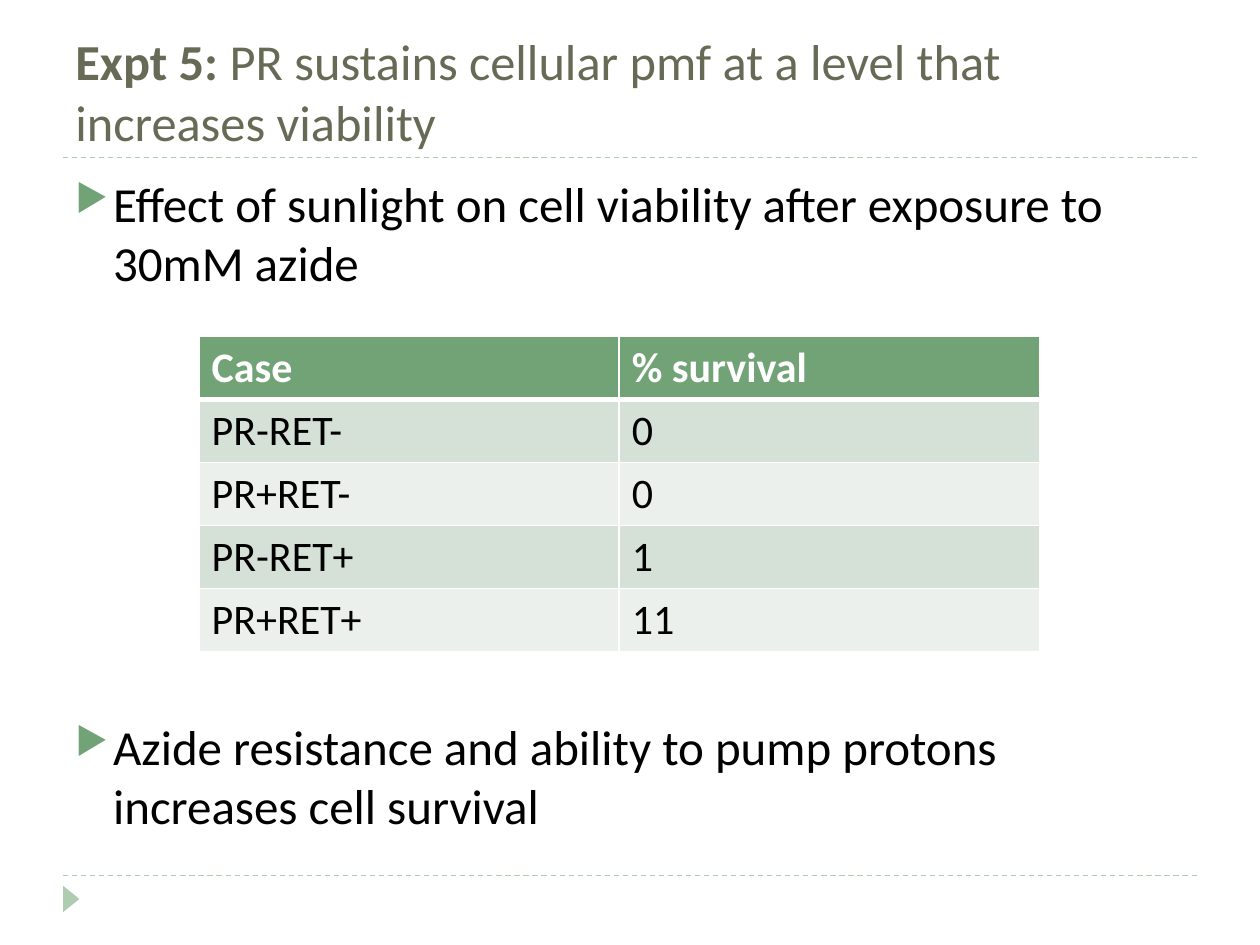
from dataclasses import dataclass

from lxml import etree
from pptx import Presentation
from pptx import util as u
from pptx.dml.color import RGBColor
from pptx.enum import dml, shapes, text
from pptx.oxml.ns import qn

PX = 9144  # EMU in one px, 100 px to the inch
FONT = "Calibri"
COLOURS = {
    "title": "676A55",
    "body": "000000",
    "accent": "72A376",
    "rule": "B0CCB0",
    "band_dark": "D5E0D6",
    "band_light": "EBF0EC",
    "white": "FFFFFF",
}
SURVIVAL_ROWS = [
    ("Case", "% survival"),
    ("PR-RET-", "0"),
    ("PR+RET-", "0"),
    ("PR-RET+", "1"),
    ("PR+RET+", "11"),
]


@dataclass
class Box:
    left: int
    top: int
    width: int
    height: int

    def emu(self) -> list[int]:
        return [px * PX for px in (self.left, self.top, self.width, self.height)]


@dataclass
class Bullet:
    words: str
    space_before: int


BULLETS = [
    Bullet("Effect of sunlight on cell viability after exposure to 30mM azide", 6),
    Bullet("Azide resistance and ability to pump protons increases cell survival", 243),
]
RULE_TOPS = (695, 125)


def rgb(name: str) -> RGBColor:
    return RGBColor.from_string(COLOURS[name])


def style_run(run, size: float, colour: str, bold: bool = False) -> None:
    run.font.name = FONT
    run.font.size = u.Pt(size)
    run.font.color.rgb = rgb(colour)
    run.font.bold = bold


def add_rule(slide, top: int) -> None:
    rule = slide.shapes.add_connector(
        shapes.MSO_CONNECTOR.STRAIGHT, 50 * PX, top * PX, 950 * PX, top * PX)
    rule.line.color.rgb = rgb("rule")
    rule.line.width = u.Pt(0.75)
    rule.line.dash_style = dml.MSO_LINE.DASH
    etree.SubElement(rule._element.spPr, qn("a:effectLst"))


def add_corner_marker(slide, box: Box) -> None:
    marker = slide.shapes.add_shape(shapes.MSO_SHAPE.ISOSCELES_TRIANGLE, *box.emu())
    marker.rotation = 90
    marker.shadow.inherit = False
    marker.fill.solid()
    marker.fill.fore_color.rgb = rgb("rule")
    marker.line.fill.background()


def add_text_frame(slide, box: Box, anchor):
    frame = slide.shapes.add_textbox(*box.emu()).text_frame
    frame.word_wrap = True
    frame.vertical_anchor = anchor
    return frame


def add_title(slide, box: Box, label: str, statement: str) -> None:
    paragraph = add_text_frame(slide, box, text.MSO_ANCHOR.BOTTOM).paragraphs[0]
    for words, bold in ((label, True), (statement, False)):
        run = paragraph.add_run()
        run.text = words
        style_run(run, 28.8, "title", bold)


def set_bullet(paragraph) -> None:
    """Give the paragraph a hanging green triangle."""
    properties = paragraph._p.get_or_add_pPr()
    properties.set("marL", str(30 * PX))
    properties.set("indent", str(-30 * PX))
    colour = etree.SubElement(properties, qn("a:buClr"))
    etree.SubElement(colour, qn("a:srgbClr"), val=COLOURS["accent"])
    etree.SubElement(properties, qn("a:buSzPct"), val="76000")
    etree.SubElement(properties, qn("a:buChar"), char="▶")


def add_bullets(slide, box: Box, bullets: list[Bullet]) -> None:
    frame = add_text_frame(slide, box, text.MSO_ANCHOR.TOP)
    for index, bullet in enumerate(bullets):
        paragraph = frame.add_paragraph() if index else frame.paragraphs[0]
        paragraph.text = bullet.words
        paragraph.space_before = u.Pt(bullet.space_before)
        set_bullet(paragraph)
        style_run(paragraph.runs[0], 28, "body")


def set_borders(cell, bottom_width: int) -> None:
    """Draw white cell borders, which must come before the fill in the XML."""
    properties = cell._tc.get_or_add_tcPr()
    widths = {"lnL": 1, "lnR": 1, "lnT": 1, "lnB": bottom_width}
    for position, (side, width) in enumerate(widths.items()):
        line = etree.Element(qn(f"a:{side}"), w=str(u.Pt(width)))
        fill = etree.SubElement(line, qn("a:solidFill"))
        etree.SubElement(fill, qn("a:srgbClr"), val=COLOURS["white"])
        properties.insert(position, line)


def add_survival_table(slide, box: Box, rows: list[tuple[str, str]]) -> None:
    table = slide.shapes.add_table(len(rows), len(rows[0]), *box.emu()).table
    for row_index, row in enumerate(rows):
        header = row_index == 0
        band = "band_dark" if row_index % 2 else "band_light"
        for column_index, words in enumerate(row):
            cell = table.cell(row_index, column_index)
            cell.text_frame.text = words
            style_run(cell.text_frame.paragraphs[0].runs[0], 24,
                      "white" if header else "body", header)
            cell.fill.solid()
            cell.fill.fore_color.rgb = rgb("accent" if header else band)
            set_borders(cell, 3 if header else 1)


def main() -> None:
    presentation = Presentation()
    presentation.slide_width = 1000 * PX
    presentation.slide_height = 750 * PX
    slide = presentation.slides.add_slide(presentation.slide_layouts[6])
    for top in RULE_TOPS:
        add_rule(slide, top)
    add_corner_marker(slide, Box(46, 707, 21, 13))
    add_title(slide, Box(50, 17, 900, 108), "Expt 5: ",
              "PR sustains cellular pmf at a level that increases viability")
    add_bullets(slide, Box(50, 133, 900, 540), BULLETS)
    add_survival_table(slide, Box(158, 267, 667, 250), SURVIVAL_ROWS)
    presentation.save("out.pptx")


if __name__ == "__main__":
    main()
